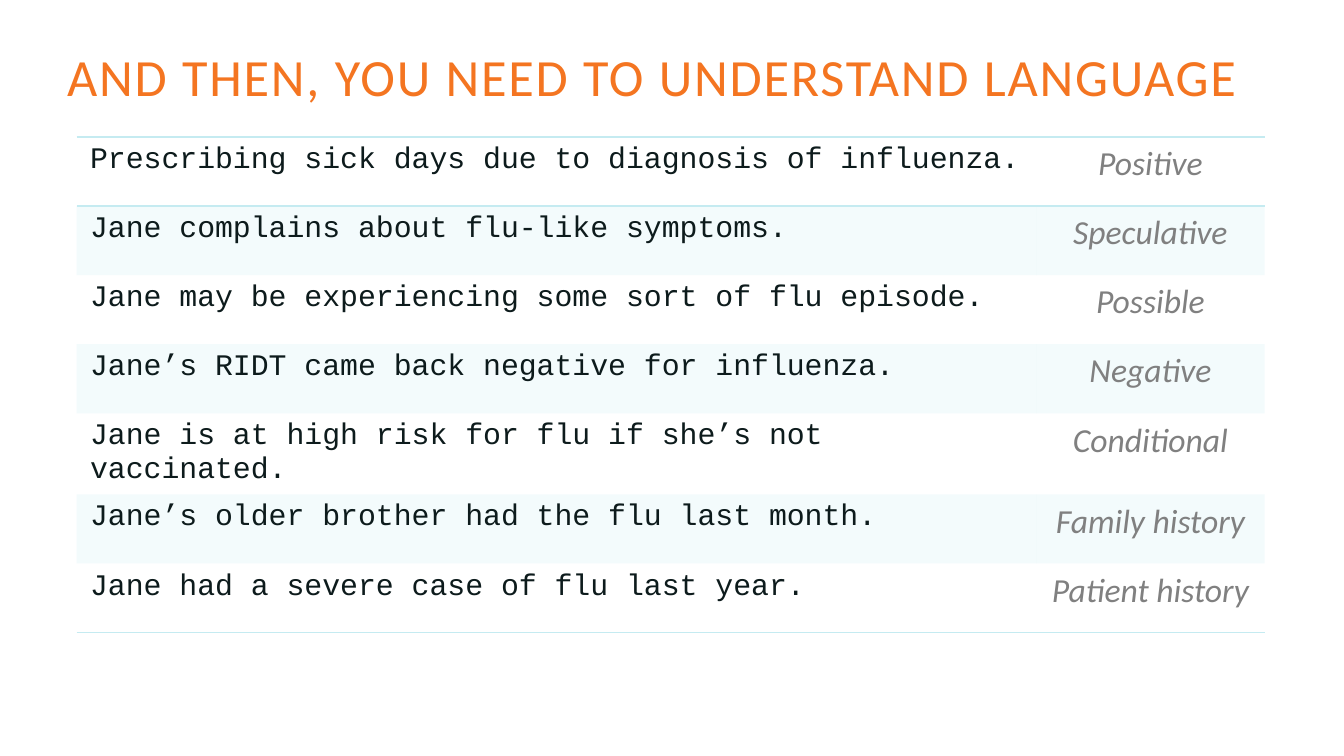
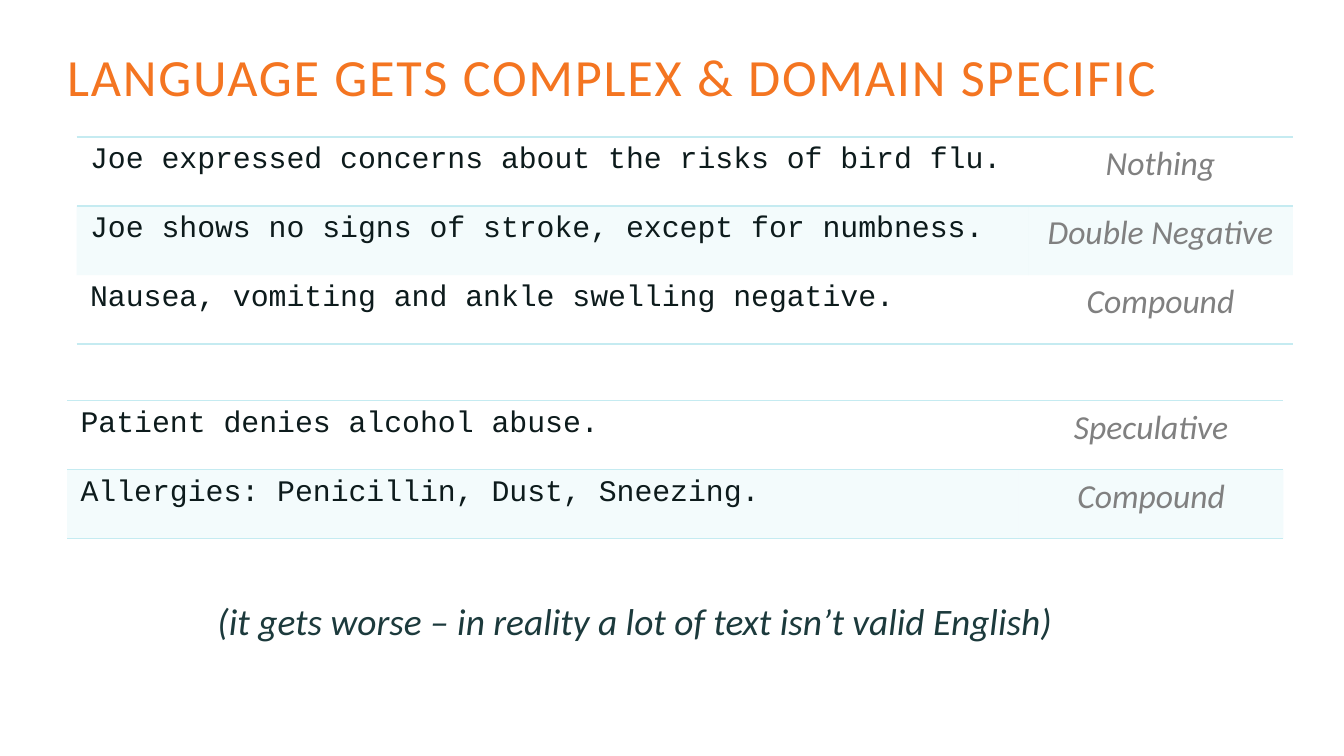
from lxml import etree
from pptx import Presentation
from pptx.dml.color import RGBColor
from pptx.enum.text import MSO_ANCHOR, MSO_AUTO_SIZE, PP_ALIGN
from pptx.oxml.ns import qn
from pptx.util import Inches, Pt

COLORS = {
    "title": "F47521",
    "sentence": "0D1B1C",
    "label": "808080",
    "remark": "1C3A3C",
    "band": "C5EBF1",
}
FORMATS = {
    "title": {"name": "Calibri", "size": Pt(28), "bold": False},
    "sentence": {"name": "Courier New", "size": Pt(16), "bold": False},
    "label": {"name": "Calibri", "size": Pt(18), "bold": False, "italic": True},
    "remark": {"name": "Calibri", "size": Pt(20), "italic": True},
}
PLAIN_STYLE = "{2D5ABB26-0587-4C30-8999-92F81FD0307C}"
BAND_ALPHA = 20
ROW_HEIGHT = 5.14

ASSERTIONS = [
    ("Prescribing sick days due to diagnosis of influenza.", "Positive"),
    ("Jane complains about flu-like symptoms.", "Speculative"),
    ("Jane may be experiencing some sort of flu episode.", "Possible"),
    ("Jane’s RIDT came back negative for influenza.", "Negative"),
    ("Jane is at high risk for flu if she’s not vaccinated.", "Conditional"),
    ("Jane’s older brother had the flu last month.", "Family history"),
    ("Jane had a severe case of flu last year.", "Patient history"),
]
COMPLEX_CASES = [
    ("Joe expressed concerns about the risks of bird flu.", "Nothing"),
    ("Joe shows no signs of stroke, except for numbness.", "Double Negative"),
    ("Nausea, vomiting and ankle swelling negative.", "Compound"),
]
DOMAIN_CASES = [
    ("Patient denies alcohol abuse.", "Speculative"),
    ("Allergies: Penicillin, Dust, Sneezing.", "Compound"),
]


def grid(*units):
    """Turn grid units, 100 to the slide's width, into lengths."""
    return [Inches(u / 10) for u in units]


def write(tf, text, role, align=PP_ALIGN.LEFT):
    p = tf.paragraphs[0]
    p.alignment = align
    r = p.add_run()
    r.text = text
    for key, value in FORMATS[role].items():
        setattr(r.font, key, value)
    r.font.color.rgb = RGBColor.from_string(COLORS[role])
    return p, r


def add_titled_slide(prs, text):
    s = prs.slides.add_slide(prs.slide_layouts[5])
    title = s.shapes.title
    title.left, title.top, title.width, title.height = grid(5, 1.7, 90, 8.5)
    tf = title.text_frame
    tf.margin_left = tf.margin_right = tf.margin_top = tf.margin_bottom = 0
    tf.vertical_anchor = MSO_ANCHOR.MIDDLE
    tf.auto_size = MSO_AUTO_SIZE.NONE
    tf.word_wrap = True
    p, r = write(tf, text, "title")
    p.line_spacing = 0.9
    r.font._element.set("spc", "100")
    return s


def add_border(cell, side):
    """Rule one side of a cell: lnT for the top, lnB for the bottom."""
    tc_pr = cell._tc.get_or_add_tcPr()
    ln = etree.SubElement(tc_pr, qn(f"a:{side}"), w=str(Pt(1)))
    fill = etree.SubElement(ln, qn("a:solidFill"))
    etree.SubElement(fill, qn("a:srgbClr"), val=COLORS["band"])


def fill_band(cell):
    cell.fill.solid()
    cell.fill.fore_color.rgb = RGBColor.from_string(COLORS["band"])
    color = cell._tc.tcPr.find(qn("a:solidFill")).find(qn("a:srgbClr"))
    etree.SubElement(color, qn("a:alpha"), val=str(BAND_ALPHA * 1000))


def add_example_table(s, left, top, widths, examples):
    """Sentences with labels; rules around the first row and under the last."""
    count = len(examples)
    box = grid(left, top, sum(widths), count * ROW_HEIGHT)
    table = s.shapes.add_table(count, len(widths), *box).table
    table.first_row = table.horz_banding = False
    table._tbl.tblPr.find(qn("a:tableStyleId")).text = PLAIN_STYLE
    for column, width in zip(table.columns, grid(*widths)):
        column.width = width
    for i, (sentence, label) in enumerate(examples):
        cells = table.rows[i].cells
        write(cells[0].text_frame, sentence, "sentence")
        write(cells[1].text_frame, label, "label", PP_ALIGN.CENTER)
        for cell in cells:
            if i == 0:
                add_border(cell, "lnT")
            if i in (0, count - 1):
                add_border(cell, "lnB")
            if i % 2:
                fill_band(cell)
            else:
                cell.fill.background()


def add_remark(s, text, *box):
    tf = s.shapes.add_textbox(*grid(*box)).text_frame
    tf.word_wrap = True
    tf.auto_size = MSO_AUTO_SIZE.SHAPE_TO_FIT_TEXT
    write(tf, text, "remark")


def main():
    prs = Presentation()
    prs.slide_width, prs.slide_height = grid(100, 56.25)

    s = add_titled_slide(prs, "AND THEN, YOU NEED TO UNDERSTAND LANGUAGE")
    add_example_table(s, 5.7, 10.2, (71.4, 17), ASSERTIONS)

    s = add_titled_slide(prs, "LANGUAGE GETS COMPLEX & DOMAIN SPECIFIC")
    widths = (70.8, 19.7)
    add_example_table(s, 5.7, 10.2, widths, COMPLEX_CASES)
    add_remark(s, "(it gets worse – in reality a lot of text isn’t valid English)",
               15.2, 44, 65.3, 4.4)
    add_example_table(s, 5, 29.8, widths, DOMAIN_CASES)

    prs.save("out.pptx")


if __name__ == "__main__":
    main()
